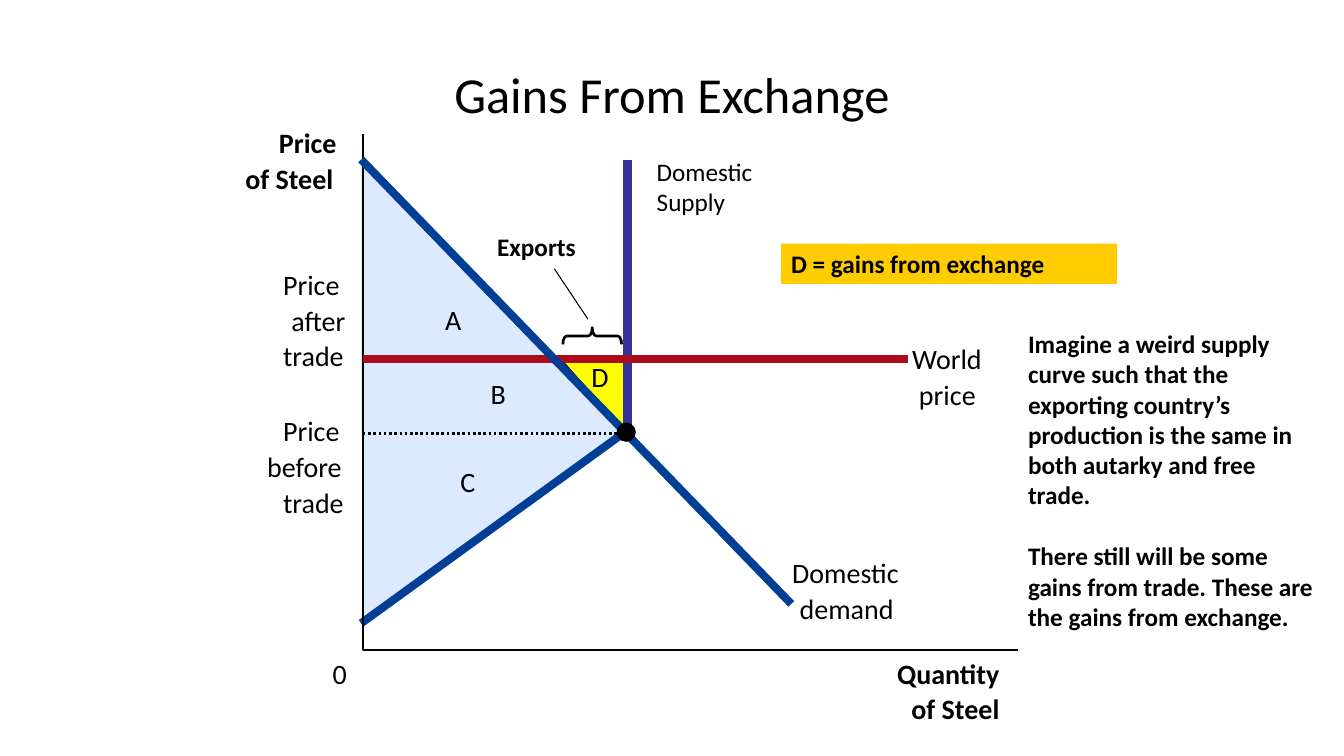
from lxml import etree
from pptx import Presentation
from pptx import util as u
from pptx.dml.color import RGBColor
from pptx.enum import dml, shapes, text
from pptx.oxml.ns import qn

BLACK, BLUE, PURPLE, RED = "000000", "003F95", "333399", "AD0D1B"
PALE, YELLOW, GOLD = "DDE9FF", "FFFF00", "FFCC00"


def color(value):
    """Turn a hex string into a colour."""
    return RGBColor.from_string(value)


def assign(target, values):
    """Set each named attribute of the target."""
    for name, value in values.items():
        setattr(target, name, value)


class Diagram:
    """Draw on one slide, measured in 160 columns and 90 rows."""

    columns, rows, line_step = 160, 90, 4.27
    font = {"name": "Calibri", "size": u.Pt(20), "bold": False}
    inset = {"margin_left": u.Inches(0.1), "margin_right": u.Inches(0.1),
             "margin_top": u.Inches(0.05), "margin_bottom": u.Inches(0.05)}
    flush = dict.fromkeys(inset, 0)

    def __init__(self, presentation):
        """Add a title-only slide to the presentation."""
        self.column = presentation.slide_width / self.columns
        self.row = presentation.slide_height / self.rows
        self.slide = presentation.slides.add_slide(presentation.slide_layouts[5])
        self.shapes = self.slide.shapes

    def at(self, column, row):
        """Return the point at a column and row."""
        return round(column * self.column), round(row * self.row)

    def box(self, left, top, width, height):
        """Return a frame on the grid."""
        return *self.at(left, top), *self.at(width, height)

    def set_text(self, shape, paragraphs, frame=None, **font):
        """Put formatted paragraphs into a shape."""
        text_frame = shape.text_frame
        assign(text_frame, {"word_wrap": True, **self.inset, **(frame or {})})
        text_frame.text = "\n".join(paragraphs)
        for paragraph in text_frame.paragraphs:
            paragraph.alignment = text.PP_ALIGN.LEFT
            assign(paragraph.font, {**self.font, **font})
            paragraph.font.color.rgb = color(BLACK)

    def title(self, words, *frame):
        """Place and format the title."""
        shape = self.shapes.title
        names = ("left", "top", "width", "height")
        assign(shape, dict(zip(names, self.box(*frame))))
        anchor = {"vertical_anchor": text.MSO_ANCHOR.MIDDLE}
        self.set_text(shape, [words], anchor, size=u.Pt(36))
        shape.text_frame.paragraphs[0].alignment = text.PP_ALIGN.CENTER

    def note(self, paragraphs, *frame, bold=True):
        """Add a wrapping text box."""
        shape = self.shapes.add_textbox(*self.box(*frame))
        self.set_text(shape, paragraphs, size=u.Pt(18), bold=bold)
        for paragraph in shape.text_frame.paragraphs[1:]:
            paragraph.space_before = u.Pt(22)

    def label(self, top, *lines, bold=False):
        """Stack single words given as text, left column and width."""
        frame = {**self.flush, "word_wrap": False,
                 "auto_size": text.MSO_AUTO_SIZE.SHAPE_TO_FIT_TEXT}
        for index, (words, left, width) in enumerate(lines):
            row = top + index * self.line_step
            shape = self.shapes.add_textbox(*self.box(left, row, width, 4))
            self.set_text(shape, [words], frame, bold=bold)

    def paint(self, shape, fill=None, line=None, width=0.75):
        """Set the fill and outline of a shape."""
        shape.shadow.inherit = False
        for part, value in ((shape.fill, fill), (shape.line.fill, line)):
            if value:
                part.solid()
                part.fore_color.rgb = color(value)
            else:
                part.background()
        if line:
            shape.line.width = u.Pt(width)
        return shape

    def preset(self, kind, *frame, rotation=0, **style):
        """Add a preset shape."""
        shape = self.shapes.add_shape(kind, *self.box(*frame))
        shape.rotation = rotation
        return self.paint(shape, **style)

    def outline(self, *points, close=True, **style):
        """Add a shape through grid points."""
        start, *others = [self.at(*point) for point in points]
        builder = self.shapes.build_freeform(*start)
        builder.add_line_segments(others, close=close)
        self.paint(builder.convert_to_shape(), **style)

    def line(self, start, end, value=BLACK, width=5.75, dash=None):
        """Join two grid points by a straight line."""
        connector = self.shapes.add_connector(
            shapes.MSO_CONNECTOR.STRAIGHT, *self.at(*start), *self.at(*end))
        connector.line.color.rgb = color(value)
        assign(connector.line, {"width": u.Pt(width), "dash_style": dash})
        etree.SubElement(connector._element.spPr, qn("a:effectLst"))


def main():
    """Build the slide and save it."""
    presentation = Presentation()
    assign(presentation, {"slide_width": u.Inches(13.33), "slide_height": u.Inches(7.5)})
    diagram = Diagram(presentation)
    kinds = shapes.MSO_SHAPE
    axis, market, top, bottom = 43.2, 74.7, 19, 74.2
    autarky, world = 51.6, 42.7

    diagram.preset(kinds.RIGHT_TRIANGLE, 67, 43, 8, 9, rotation=180, fill=YELLOW, line=BLACK)
    diagram.outline((74.2, autarky), (43, autarky), (43, top), fill=PALE)
    diagram.outline((market, autarky), (axis, autarky), (axis, bottom), fill=PALE)
    diagram.line((market, 52), (market, top), PURPLE, 6)
    diagram.line((43, bottom), (75, 51), BLUE)
    diagram.note(["Domestic Supply"], 77, 18, 17, 8.4, bold=False)
    diagram.title("Gains From Exchange", 8, 3.6, 144, 15)
    diagram.outline((axis, 16), (axis, 77.4), (121.2, 77.4), close=False, line=BLACK, width=1.88)

    for name, left, row in (("D", 70.4, 42.8), ("C", 54.8, 55.3),
                            ("B", 58.4, 44.8), ("A", 53, 36)):
        diagram.label(row, (name, left, 2))
    diagram.label(14.9, ("Price", 33.2, 7), ("of Steel", 29.2, 10.6), bold=True)

    diagram.line((axis, world), (108.1, world), RED)
    diagram.label(31.8, ("Price", 33.7, 6.8), ("after", 34.7, 6.6), ("trade", 33.7, 7.6))
    diagram.label(40.7, ("World", 108.6, 8.3), ("price", 109.4, 6.8))

    diagram.line((43, top), (94.2, 71.9), BLUE)
    diagram.label(66.1, ("Domestic", 94.3, 12.8), ("demand", 95.2, 11.3))

    diagram.line((axis, autarky), (market, autarky), width=1.88,
                 dash=dml.MSO_LINE.ROUND_DOT)
    diagram.preset(kinds.OVAL, 73.4, 50.3, 2.3, 2.3, fill=BLACK)
    diagram.label(49.2, ("Price", 33.7, 6.8), ("before", 31.8, 9), ("trade", 33.7, 7.6))
    diagram.label(78.1, ("0", 39.6, 1.7))
    diagram.label(78.1, ("Quantity", 106.8, 12.2), ("of Steel", 108.5, 10.6), bold=True)

    brace = diagram.preset(kinds.LEFT_BRACE, 69.5, 36.5, 2, 7, rotation=90, line=BLACK, width=1.88)
    brace.adjustments[0] = 0.23
    diagram.note(["Exports"], 58, 27, 14, 4.8)
    diagram.line((66, 32), (70, 38), width=0.75)

    banner = diagram.preset(kinds.RECTANGLE, 93, 29, 40, 4.8, fill=GOLD)
    diagram.set_text(banner, ["D = gains from exchange"], size=u.Pt(18), bold=True)
    diagram.note([
        "Imagine a weird supply curve such that the exporting country’s "
        "production is the same in both autarky and free trade.",
        "There still will be some gains from trade. These are the gains from exchange.",
    ], 121.2, 38.5, 36.6, 37.6)
    presentation.save("out.pptx")


if __name__ == "__main__":
    main()
